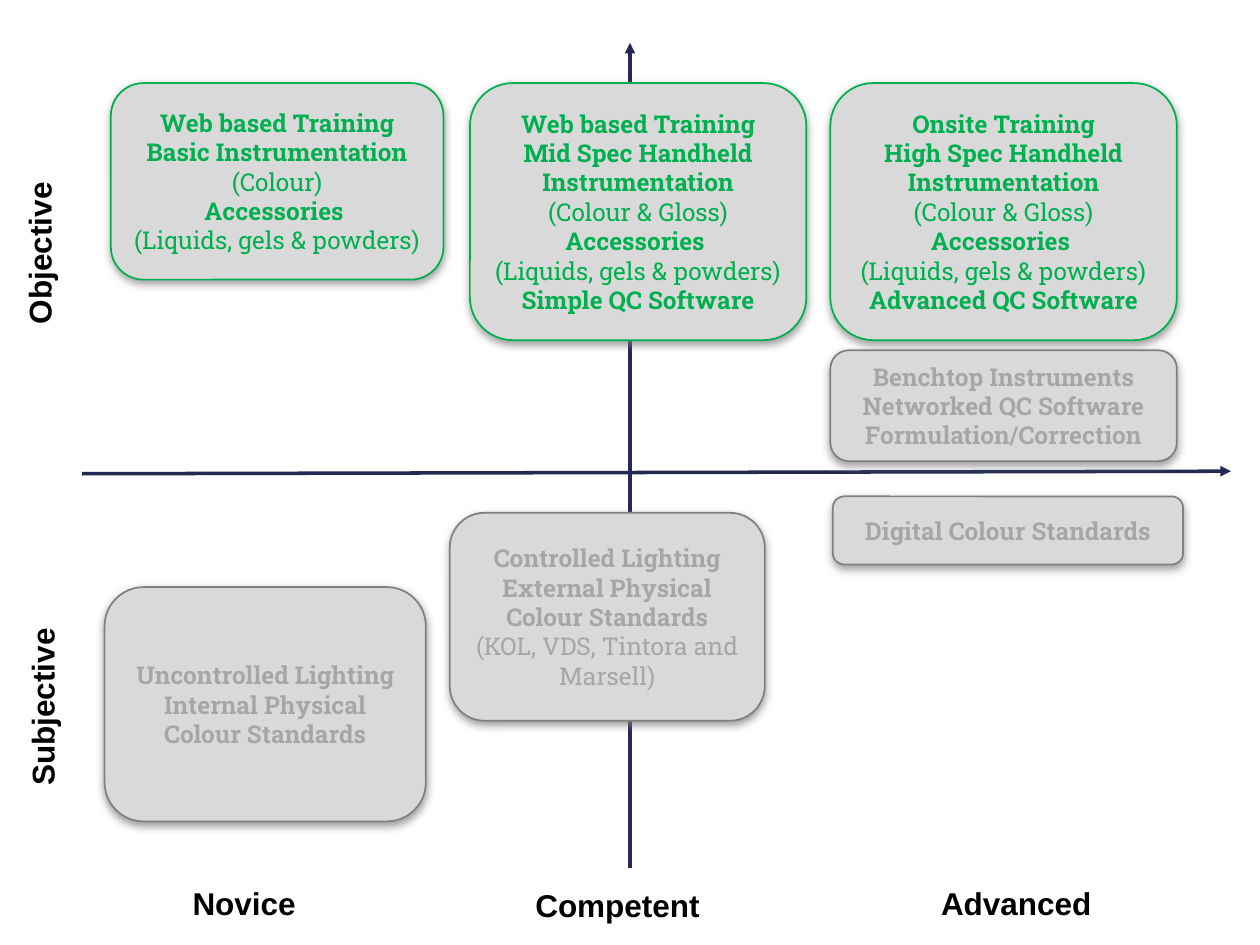
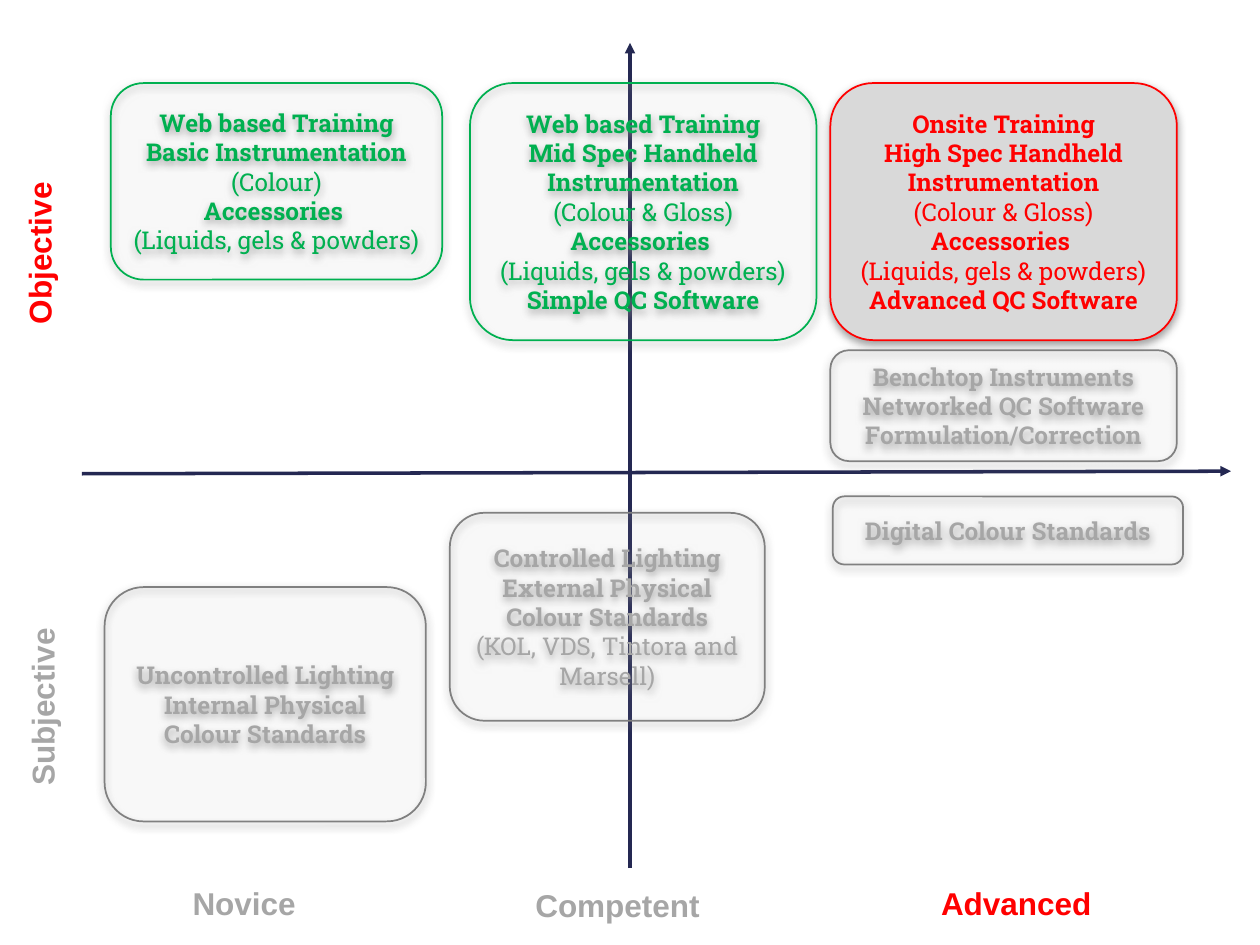
import pptx
import pptx.dml.color
import pptx.enum.shapes
import pptx.enum.text
import pptx.oxml.ns
import pptx.util
from lxml import etree

SCALE = 9144
COLOURS = {
    "axis": "242852",
    "card": "D9D9D9",
    "green": "00B050",
    "red": "FF0000",
    "border": "808080",
    "muted": "A6A6A6",
    "black": "000000",
    "shadow": "808080",
}
FAINT_PERCENT = 5

NOVICE_TRAINING = [
    "Web based Training",
    "Basic Instrumentation",
    "(Colour)",
    "Accessories ",
    "(Liquids, gels & powders)",
]


def handheld_training(place, spec, software):
    return [
        f"{place} Training",
        f"{spec} Spec Handheld Instrumentation",
        "(Colour & Gloss)",
        "Accessories ",
        "(Liquids, gels & powders)",
        f"{software} QC Software",
    ]


COMPETENT_TRAINING = handheld_training("Web based", "Mid", "Simple")
ADVANCED_TRAINING = handheld_training("Onsite", "High", "Advanced")

MUTED_CARDS = [
    ((83, 466, 255, 186), ["Uncontrolled Lighting", "Internal Physical Colour Standards"]),
    ((357, 407, 250, 165), ["Controlled Lighting", "External Physical Colour Standards",
                            "(KOL, VDS, Tintora and Marsell)"]),
    ((661, 394, 278, 54), ["Digital Colour Standards"]),
    ((659, 278, 275, 88), ["Benchtop Instruments", "Networked QC Software",
                           "Formulation/Correction"]),
]
LEVEL_LABELS = {
    "Novice": (143, 697, 103, 40),
    "Competent": (415, 698, 152, 40),
    "Advanced": (737, 697, 141, 40),
}
METHOD_LABELS = {
    "Subjective": (-43, 537, 153, 40),
    "Objective": (-58, 158, 178, 40),
}


def px(length):
    return pptx.util.Emu(length * SCALE)


def colour(name):
    return pptx.dml.color.RGBColor.from_string(COLOURS[name])


def add_element(parent, tag, **attributes):
    return etree.SubElement(parent, pptx.oxml.ns.qn(tag), attributes)


class MatrixDeck:
    card_font = "Roboto Slab"
    label_font = "Arial"

    def __init__(self):
        self.deck = pptx.Presentation()
        self.deck.slide_width = px(1000)
        self.deck.slide_height = px(750)
        self.page = None

    def add_page(self):
        self.page = self.deck.slides.add_slide(self.deck.slide_layouts[6])

    def style_font(self, paragraph, face, size, bold, ink):
        paragraph.font.name = face
        paragraph.font.size = pptx.util.Pt(size)
        paragraph.font.bold = bold
        paragraph.font.color.rgb = colour(ink)

    def axis(self, start, end):
        connector = self.page.shapes.add_connector(
            pptx.enum.shapes.MSO_CONNECTOR.STRAIGHT, *map(px, start + end))
        connector.line.color.rgb = colour("axis")
        connector.line.width = pptx.util.Pt(2)
        add_element(connector.line._get_or_add_ln(), "a:tailEnd", type="triangle")
        add_element(connector._element.spPr, "a:effectLst")

    def shade(self, box):
        box.shadow.inherit = False
        effects = box._element.spPr.find(pptx.oxml.ns.qn("a:effectLst"))
        shadow = add_element(effects, "a:outerShdw", blurRad=str(pptx.util.Pt(5)),
                             dist=str(pptx.util.Pt(2)), dir="5400000", rotWithShape="0")
        tint = add_element(shadow, "a:srgbClr", val=COLOURS["shadow"])
        add_element(tint, "a:alpha", val="75000")

    def card(self, bounds, lines, border, ink, faint):
        box = self.page.shapes.add_shape(
            pptx.enum.shapes.MSO_SHAPE.ROUNDED_RECTANGLE, *map(px, bounds))
        box.fill.solid()
        box.fill.fore_color.rgb = colour("card")
        if faint:
            tint = box._element.spPr.find(".//" + pptx.oxml.ns.qn("a:srgbClr"))
            add_element(tint, "a:alpha", val=str(FAINT_PERCENT * 1000))
        box.line.color.rgb = colour(border)
        box.line.width = pptx.util.Pt(1)
        self.shade(box)
        frame = box.text_frame
        frame.word_wrap = True
        frame.vertical_anchor = pptx.enum.text.MSO_ANCHOR.MIDDLE
        for index, line in enumerate(lines):
            paragraph = frame.add_paragraph() if index else frame.paragraphs[0]
            paragraph.text = line
            paragraph.alignment = pptx.enum.text.PP_ALIGN.CENTER
            self.style_font(paragraph, self.card_font, 14, not line.startswith("("), ink)

    def label(self, bounds, text, ink, upright=False):
        box = self.page.shapes.add_textbox(*map(px, bounds))
        box.rotation = 270 if upright else 0
        frame = box.text_frame
        frame.word_wrap = upright
        frame.auto_size = pptx.enum.text.MSO_AUTO_SIZE.SHAPE_TO_FIT_TEXT
        paragraph = frame.paragraphs[0]
        paragraph.text = text
        self.style_font(paragraph, self.label_font, 18, True, ink)

    def matrix(self, novice_width, competent_width, highlights=()):
        self.add_page()
        faint = bool(highlights)
        advanced_ink = "red" if faint else "green"
        self.axis((500, 689), (500, 34))
        self.axis((65, 376), (977, 374))
        self.card((373, 66, competent_width, 204), COMPETENT_TRAINING, "green", "green", faint)
        self.card((88, 66, novice_width, 156), NOVICE_TRAINING, "green", "green", faint)
        self.card((659, 66, 275, 204), ADVANCED_TRAINING, advanced_ink, advanced_ink, False)
        for labels, upright in ((LEVEL_LABELS, False), (METHOD_LABELS, True)):
            for text, bounds in labels.items():
                ink = "red" if text in highlights else "muted" if faint else "black"
                self.label(bounds, text, ink, upright)
        for bounds, lines in MUTED_CARDS:
            self.card(bounds, lines, "border", "muted", faint)


def main():
    matrix_deck = MatrixDeck()
    matrix_deck.matrix(novice_width=264, competent_width=267)
    matrix_deck.matrix(novice_width=263, competent_width=275,
                       highlights=("Advanced", "Objective"))
    matrix_deck.deck.save("out.pptx")


if __name__ == "__main__":
    main()
